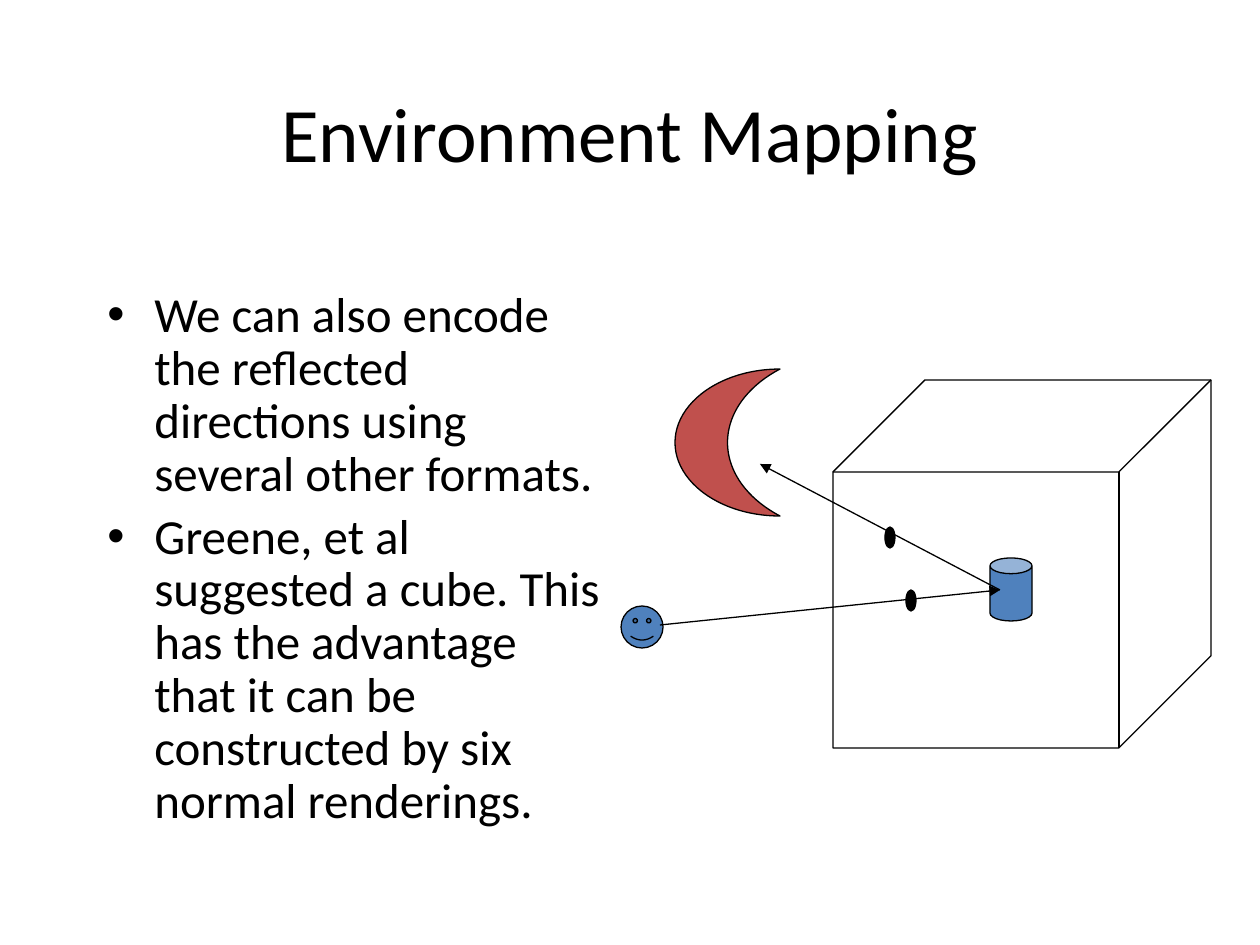
from pptx import Presentation
from pptx.dml.color import RGBColor
from pptx.enum.shapes import MSO_CONNECTOR, MSO_SHAPE
from pptx.enum.text import MSO_ANCHOR, PP_ALIGN
from pptx.oxml.ns import qn
from pptx.util import Pt
from lxml.etree import SubElement

EMU_PER_PX = 914400 / 126
FONT = "Calibri"
BLACK = RGBColor(0x00, 0x00, 0x00)
BLUE = RGBColor(0x4F, 0x81, 0xBD)
RED = RGBColor(0xC0, 0x50, 0x4D)

BULLETS = [
    ["We can also encode", "the reflected directions using several other formats."],
    ["Greene, et al suggested a cube. This has the advantage that it can be "
     "constructed by six normal renderings."],
]


def px(length):
    return round(length * EMU_PER_PX)


def add_text(paragraph, text, size):
    run = paragraph.add_run()
    run.text = text
    run.font.name = FONT
    run.font.size = Pt(size)
    run.font.color.rgb = BLACK


def add_title(slide, left, top, width, height):
    title = slide.shapes.title
    title.left, title.top = px(left), px(top)
    title.width, title.height = px(width), px(height)
    title.text_frame.vertical_anchor = MSO_ANCHOR.MIDDLE
    heading = title.text_frame.paragraphs[0]
    heading.alignment = PP_ALIGN.CENTER
    add_text(heading, "Environment Mapping", 44)


def add_bullets(slide, left, top, width, height):
    body = slide.shapes.add_textbox(px(left), px(top), px(width), px(height))
    frame = body.text_frame
    frame.word_wrap = True
    for index, lines in enumerate(BULLETS):
        paragraph = frame.add_paragraph() if index else frame.paragraphs[0]
        paragraph.line_spacing = 0.9
        paragraph.space_before = Pt(5.6)
        properties = paragraph._p.get_or_add_pPr()
        properties.set("marL", str(px(47)))
        properties.set("indent", str(-px(47)))
        SubElement(properties, qn("a:buFont")).set("typeface", "Arial")
        SubElement(properties, qn("a:buChar")).set("char", "•")
        for number, line in enumerate(lines):
            if number:
                paragraph.add_line_break()
            add_text(paragraph, line, 28)


def add_diagram(slide, left, top):
    """Draw the eye's ray reflecting off an object inside the mapping cube."""

    def solid(kind, x, y, width, height, fill=None):
        shape = slide.shapes.add_shape(
            kind, px(left + x), px(top + y), px(width), px(height))
        shape.shadow.inherit = False
        if fill is None:
            shape.fill.background()
        else:
            shape.fill.solid()
            shape.fill.fore_color.rgb = fill
        shape.line.color.rgb = BLACK
        shape.line.width = Pt(0.75)
        return shape

    def ray(start, end):
        arrow = slide.shapes.add_connector(
            MSO_CONNECTOR.STRAIGHT,
            px(left + start[0]), px(top + start[1]),
            px(left + end[0]), px(top + end[1]))
        arrow.line.color.rgb = BLACK
        arrow.line.width = Pt(0.75)
        SubElement(arrow.line._get_or_add_ln(), qn("a:tailEnd")).set("type", "triangle")
        SubElement(arrow._element.spPr, qn("a:effectLst"))

    def cube_crossing(x, y):
        solid(MSO_SHAPE.OVAL, x, y, 10, 21, BLACK)

    eye_point, hit_point, moon_point = (39, 256), (379, 221), (139, 95)

    solid(MSO_SHAPE.CUBE, 212, 11, 378, 368)
    reflector = solid(MSO_SHAPE.CAN, 369, 189, 42, 63, BLUE)
    reflector.adjustments[0] = 0.375
    ray(hit_point, moon_point)
    solid(MSO_SHAPE.MOON, 54, 0, 105, 147, RED)
    cube_crossing(264, 158)
    solid(MSO_SHAPE.SMILEY_FACE, 0, 237, 42, 42, BLUE)
    ray(eye_point, hit_point)
    cube_crossing(285, 221)


def main():
    deck = Presentation()
    deck.slide_width, deck.slide_height = px(1260), px(945)
    slide = deck.slides.add_slide(deck.slide_layouts[5])
    add_title(slide, 95, 53, 1070, 158)
    add_bullets(slide, 95, 284, 525, 567)
    add_diagram(slide, 621, 369)
    deck.save("out.pptx")


if __name__ == "__main__":
    main()
